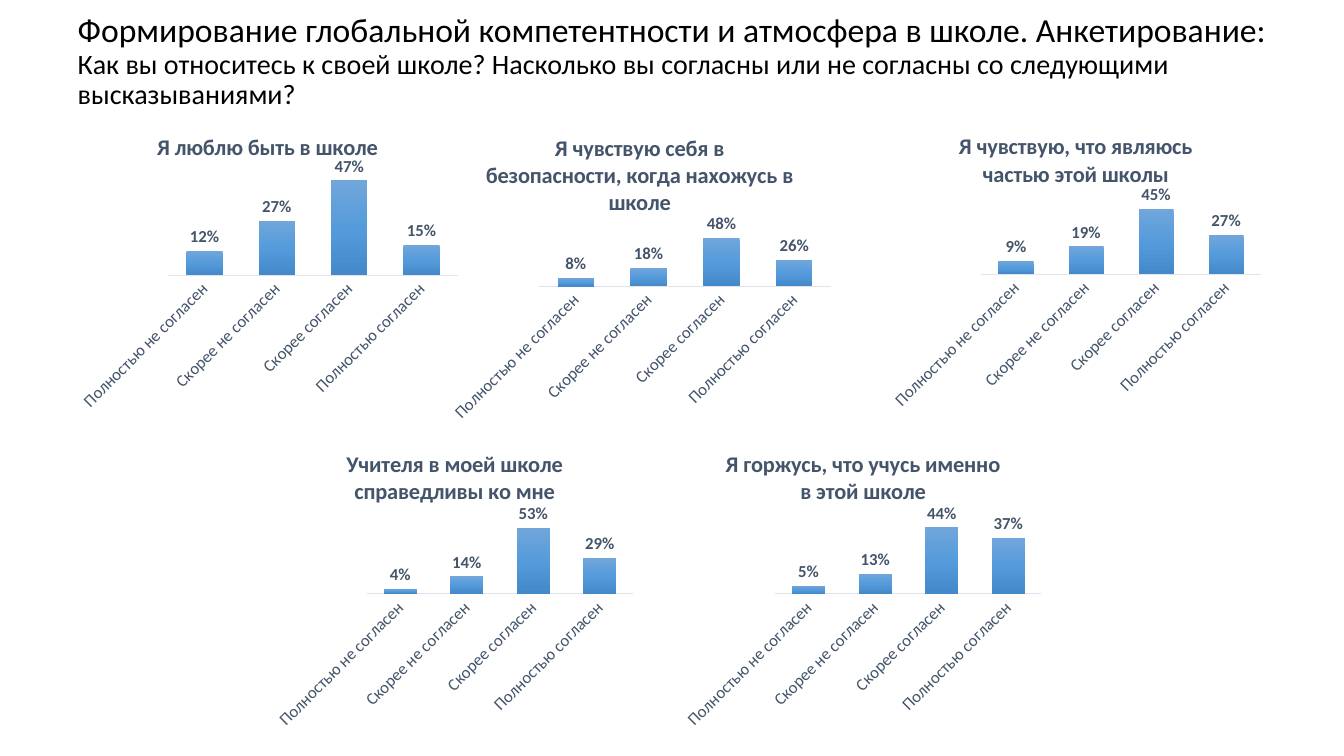
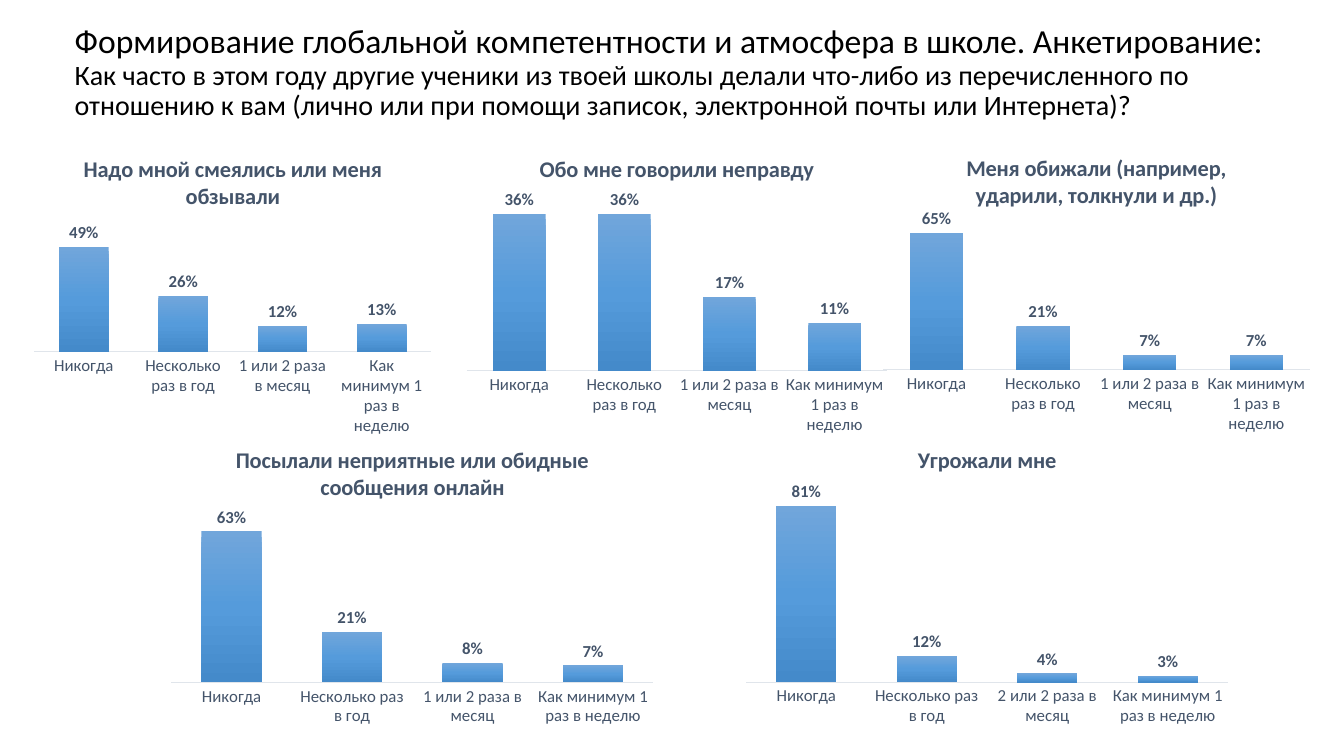
from copy import deepcopy
from dataclasses import dataclass

from pptx import Presentation
from pptx.chart.data import CategoryChartData
from pptx.dml.color import RGBColor
from pptx.enum.chart import XL_CHART_TYPE as ChartType
from pptx.enum.chart import XL_LABEL_POSITION as LabelPosition
from pptx.enum.chart import XL_TICK_MARK as TickMark
from pptx.enum.text import MSO_ANCHOR, MSO_AUTO_SIZE, PP_ALIGN
from pptx.oxml import parse_xml
from pptx.oxml.ns import nsdecls
from pptx.util import Inches, Pt


@dataclass(frozen=True)
class Theme:
    font: str = "Calibri"
    ink: RGBColor = RGBColor.from_string("000000")
    slate: RGBColor = RGBColor.from_string("44546A")
    axis: RGBColor = RGBColor.from_string("E0E5EB")
    bar_stops: tuple = ((0, "71A6DB"), (0.5, "559BDB"), (1, "448ACA"))
    heading: int = 24
    question: int = 20
    chart_title: int = 16
    label: int = 12
    chart_base: int = 10


THEME = Theme()
HEADING = "Формирование глобальной компетентности и атмосфера в школе. Анкетирование:"
AGREEMENT = ("Полностью не согласен", "Скорее не согласен", "Скорее согласен", "Полностью согласен")
FREQUENCY = ("Никогда", "Несколько раз в год", "1 или 2 раза в месяц", "Как минимум 1 раз в неделю")
THREATS = FREQUENCY[:2] + ("2 или 2 раза в месяц",) + FREQUENCY[3:]


@dataclass(frozen=True)
class Survey:
    question: str
    title_box: tuple
    label_turn: int
    plot_left: float
    plot_right: float
    answers: tuple


@dataclass(frozen=True)
class Answer:
    statement: str
    options: tuple
    shares: tuple
    box: tuple
    baseline: float
    peak: float
    inset: float = 0


ATTITUDE = Survey(
    "Как вы относитесь к своей школе? Насколько вы согласны или не согласны со следующими высказываниями?",
    (0.67, 0.22, 12.1, 0.79), -45, 0.97, 0.07,
    (
        Answer("Я люблю быть в школе", AGREEMENT, (0.12, 0.27, 0.47, 0.15),
               (0.7, 1.15, 3.91, 3), 1.58, 0.94),
        Answer("Я чувствую себя в безопасности, когда нахожусь в школе", AGREEMENT, (0.08, 0.18, 0.48, 0.26),
               (4.38, 1.16, 3.93, 3.12), 1.68, 0.48),
        Answer("Я чувствую, что являюсь частью этой школы", AGREEMENT, (0.09, 0.19, 0.45, 0.27),
               (8.76, 1.15, 3.82, 2.99), 1.57, 0.65),
        Answer("Учителя в моей школе справедливы ко мне", AGREEMENT, (0.04, 0.14, 0.53, 0.29),
               (2.67, 4.3, 3.68, 3), 1.59, 0.65),
        Answer("Я горжусь, что учусь именно в этой школе", AGREEMENT, (0.05, 0.13, 0.44, 0.37),
               (6.72, 4.3, 3.68, 3), 1.59, 0.66),
    ),
)
BULLYING = Survey(
    "Как часто в этом году другие ученики из твоей школы делали что-либо из перечисленного "
    "по отношению к вам (лично или при помощи записок, электронной почты или Интернета)?",
    (0.64, 0, 12.3, 1.45), 0, 0.09, 0.09,
    (
        Answer("Надо мной смеялись или меня обзывали", FREQUENCY, (0.49, 0.26, 0.12, 0.13),
               (0.25, 1.37, 4.12, 3), 2.12, 1.04),
        Answer("Обо мне говорили неправду", FREQUENCY, (0.36, 0.36, 0.17, 0.11),
               (4.56, 1.37, 4.31, 3), 2.31, 1.56, -0.02),
        Answer("Меня обижали (например, ударили, толкнули и др.)", FREQUENCY, (0.65, 0.21, 0.07, 0.07),
               (8.67, 1.36, 4.41, 3), 2.31, 1.36),
        Answer("Посылали неприятные или обидные сообщения онлайн", FREQUENCY, (0.63, 0.21, 0.08, 0.07),
               (1.59, 4.26, 5, 3), 2.51, 1.5, 0.02),
        Answer("Угрожали мне", THREATS, (0.81, 0.12, 0.04, 0.03),
               (7.29, 4.26, 5, 3), 2.51, 1.75, 0.02),
    ),
)


def apply(target, **formats):
    for key, value in formats.items():
        setattr(target, key, value)


def style_font(font, size, color, bold=False):
    apply(font, name=THEME.font, size=Pt(size), bold=bold)
    font.color.rgb = color


def place_title(title, box, question):
    left, top, width, height = map(Inches, box)
    apply(title, left=left, top=top, width=width, height=height)
    frame = title.text_frame
    apply(frame, auto_size=MSO_AUTO_SIZE.NONE, word_wrap=True, vertical_anchor=MSO_ANCHOR.MIDDLE)
    line = frame.paragraphs[0]
    apply(line, alignment=PP_ALIGN.LEFT, line_spacing=0.9)
    heading = line.add_run()
    heading.text = HEADING
    style_font(heading.font, THEME.heading, THEME.ink)
    line.add_line_break()
    detail = line.add_run()
    detail.text = question
    style_font(detail.font, THEME.question, THEME.ink)


def place_plot(chart, survey, answer):
    width, height = answer.box[2:]
    left = survey.plot_left + answer.inset
    right = survey.plot_right + answer.inset
    parts = {
        "x": left / width,
        "y": (answer.baseline - answer.peak) / height,
        "w": (width - left - right) / width,
        "h": answer.peak / height,
    }
    modes = "".join(f'<c:{axis}Mode val="edge"/>' for axis in "xy")
    sizes = "".join(f'<c:{key} val="{value:.4f}"/>' for key, value in parts.items())
    layout = parse_xml(
        f'<c:layout {nsdecls("c")}><c:manualLayout><c:layoutTarget val="inner"/>'
        f"{modes}{sizes}</c:manualLayout></c:layout>"
    )
    plot_area = chart.element.xpath(".//c:plotArea")[0]
    for old in plot_area.xpath("./c:layout"):
        plot_area.remove(old)
    plot_area.insert(0, layout)


def paint_bars(chart, series):
    fill = series.format.fill
    fill.gradient()
    fill.gradient_angle = 270
    stops = chart.element.xpath(".//c:ser/c:spPr/a:gradFill/a:gsLst")[0]
    stops.append(deepcopy(stops[-1]))
    for stop, (position, color) in zip(fill.gradient_stops, THEME.bar_stops):
        stop.position = position
        stop.color.rgb = RGBColor.from_string(color)


def format_axes(chart, turn, peak):
    options = chart.category_axis
    apply(options, major_tick_mark=TickMark.NONE, has_major_gridlines=False)
    style_font(options.tick_labels.font, THEME.label, THEME.slate)
    options.format.line.color.rgb = THEME.axis
    options.format.line.width = Pt(0.75)
    body = chart.element.xpath(".//c:catAx/c:txPr/a:bodyPr")[0]
    body.set("rot", str(turn * 60000))
    apply(chart.value_axis, visible=False, has_major_gridlines=False, minimum_scale=0, maximum_scale=peak)


def add_answer_chart(slide, survey, answer):
    data = CategoryChartData(number_format="0%")
    data.categories = answer.options
    data.add_series("Series 1", answer.shares)
    chart = slide.shapes.add_chart(ChartType.COLUMN_CLUSTERED, *map(Inches, answer.box), data).chart
    apply(chart, has_legend=False, has_title=True)
    style_font(chart.font, THEME.chart_base, THEME.ink)
    title = chart.chart_title
    title.include_in_layout = False
    statement = title.text_frame.paragraphs[0].add_run()
    statement.text = answer.statement
    style_font(statement.font, THEME.chart_title, THEME.slate, True)
    bars = chart.plots[0]
    apply(bars, gap_width=100, overlap=-24, vary_by_categories=False, has_data_labels=True)
    labels = bars.data_labels
    apply(labels, show_value=True, position=LabelPosition.OUTSIDE_END,
          number_format="0%", number_format_is_linked=False)
    style_font(labels.font, THEME.label, THEME.slate, True)
    paint_bars(chart, bars.series[0])
    format_axes(chart, survey.label_turn, max(answer.shares))
    place_plot(chart, survey, answer)


def add_survey_slide(deck, survey):
    slide = deck.slides.add_slide(deck.slide_layouts[5])
    place_title(slide.shapes.title, survey.title_box, survey.question)
    for answer in survey.answers:
        add_answer_chart(slide, survey, answer)


def main():
    deck = Presentation()
    apply(deck, slide_width=Inches(13.33), slide_height=Inches(7.5))
    for survey in (ATTITUDE, BULLYING):
        add_survey_slide(deck, survey)
    deck.save("out.pptx")


if __name__ == "__main__":
    main()
